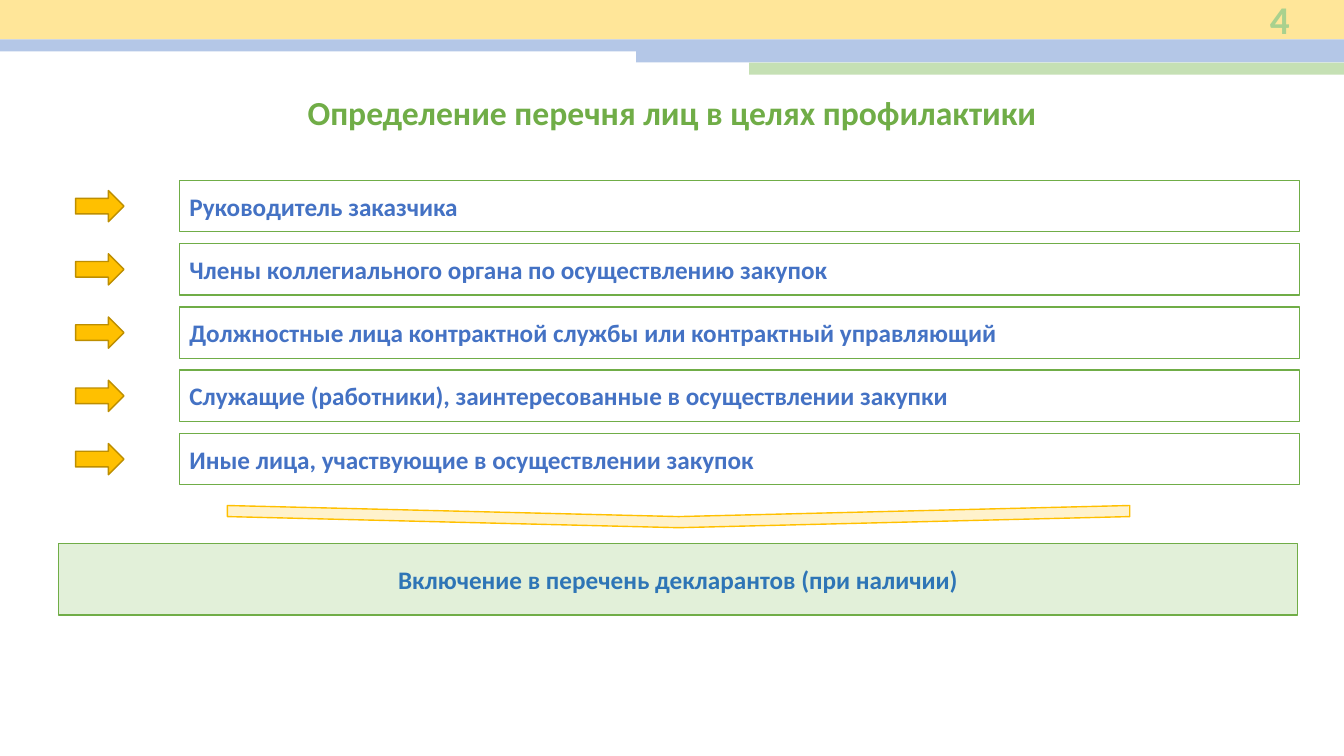
from dataclasses import dataclass

from pptx import Presentation
from pptx.dml.color import RGBColor
from pptx.enum.shapes import MSO_SHAPE as Shape
from pptx.enum.text import MSO_ANCHOR as Anchor, PP_ALIGN as Align
from pptx.util import Inches, Pt

# Content
TITLE = "Определение перечня лиц в целях профилактики"
PAGE_NUMBER = "4"
PERSONS = [
    "Руководитель заказчика",
    "Члены коллегиального органа по осуществлению закупок",
    "Должностные лица контрактной службы или контрактный управляющий",
    "Служащие (работники), заинтересованные в осуществлении закупки",
    "Иные лица, участвующие в осуществлении закупок",
]
RESULT = "Включение в перечень декларантов (при наличии)"


@dataclass(frozen=True)
class Theme:
    font: str = "Calibri"
    title_size: int = 24
    number_size: int = 28
    body_size: int = 18
    line_width: int = 1
    green: str = "70AD47"
    number_green: str = "A9D18E"
    band_green: str = "C5E0B4"
    pale_green: str = "E2F0D9"
    blue: str = "4472C4"
    result_blue: str = "2E75B6"
    band_blue: str = "B4C7E7"
    band_yellow: str = "FFE699"
    pale_yellow: str = "FFF2CC"
    gold: str = "FFC000"
    dark_gold: str = "BD8E00"


THEME = Theme()

# Layout, in inches
WIDTH, HEIGHT = 13.33, 7.5
BANDS = [  # left, top, height, colour; each band runs to the right edge
    (0, 0, 0.39, THEME.band_yellow),
    (0, 0.39, 0.12, THEME.band_blue),
    (6.31, 0.5, 0.12, THEME.band_blue),
    (7.43, 0.62, 0.12, THEME.band_green),
]
ROW_TOP, ROW_STEP, ROW_HEIGHT = 1.79, 0.6275, 0.51
ROW_LEFT, ROW_WIDTH = 1.78, 11.11
ARROW_LEFT, ARROW_WIDTH, ARROW_HEIGHT = 0.75, 0.48, 0.31


def add_box(page, kind, left, top, width, height, fill=None, line=None):
    box = page.shapes.add_shape(
        kind, Inches(left), Inches(top), Inches(width), Inches(height))
    box.shadow.inherit = False
    if fill:
        box.fill.solid()
        box.fill.fore_color.rgb = RGBColor.from_string(fill)
    else:
        box.fill.background()
    if line:
        box.line.color.rgb = RGBColor.from_string(line)
        box.line.width = Pt(THEME.line_width)
    else:
        box.line.fill.background()
    return box


def write(box, text, size, color, align, anchor=Anchor.MIDDLE):
    frame = box.text_frame
    frame.word_wrap = True
    frame.vertical_anchor = anchor
    frame.margin_left = frame.margin_right = Inches(0.1)
    frame.margin_top = frame.margin_bottom = Inches(0.05)
    para = frame.paragraphs[0]
    para.text = text
    para.alignment = align
    para.font.name = THEME.font
    para.font.size = Pt(size)
    para.font.bold = True
    para.font.color.rgb = RGBColor.from_string(color)


def main():
    deck = Presentation()
    deck.slide_width, deck.slide_height = Inches(WIDTH), Inches(HEIGHT)
    page = deck.slides.add_slide(deck.slide_layouts[5])

    # Header bands
    for left, top, height, color in BANDS:
        add_box(page, Shape.RECTANGLE, left, top, WIDTH - left, height, color)

    # Title and page number
    title = page.shapes.title
    title.left, title.top = Inches(0.6), Inches(0.86)
    title.width, title.height = Inches(12.13), Inches(0.5)
    write(title, TITLE, THEME.title_size, THEME.green, Align.CENTER, Anchor.TOP)
    number = page.shapes.add_textbox(
        Inches(11.9), Inches(0), Inches(0.99), Inches(0.38))
    write(number, PAGE_NUMBER, THEME.number_size, THEME.number_green, Align.RIGHT)

    # Persons, each with an arrow centred on its row
    for index, person in enumerate(PERSONS):
        top = ROW_TOP + index * ROW_STEP
        row = add_box(page, Shape.RECTANGLE, ROW_LEFT, top, ROW_WIDTH,
                      ROW_HEIGHT, line=THEME.green)
        write(row, person, THEME.body_size, THEME.blue, Align.LEFT)
        add_box(page, Shape.RIGHT_ARROW, ARROW_LEFT,
                top + (ROW_HEIGHT - ARROW_HEIGHT) / 2, ARROW_WIDTH,
                ARROW_HEIGHT, THEME.gold, THEME.dark_gold)

    # Wide chevron pointing down to the result
    chevron = add_box(page, Shape.CHEVRON, 6.62, 0.65, 0.22, 8.95,
                      THEME.pale_yellow, THEME.gold)
    chevron.rotation = 90
    result = add_box(page, Shape.RECTANGLE, 0.58, 5.39, 12.29, 0.71,
                     THEME.pale_green, THEME.green)
    write(result, RESULT, THEME.body_size, THEME.result_blue, Align.CENTER)

    deck.save("out.pptx")


if __name__ == "__main__":
    main()
